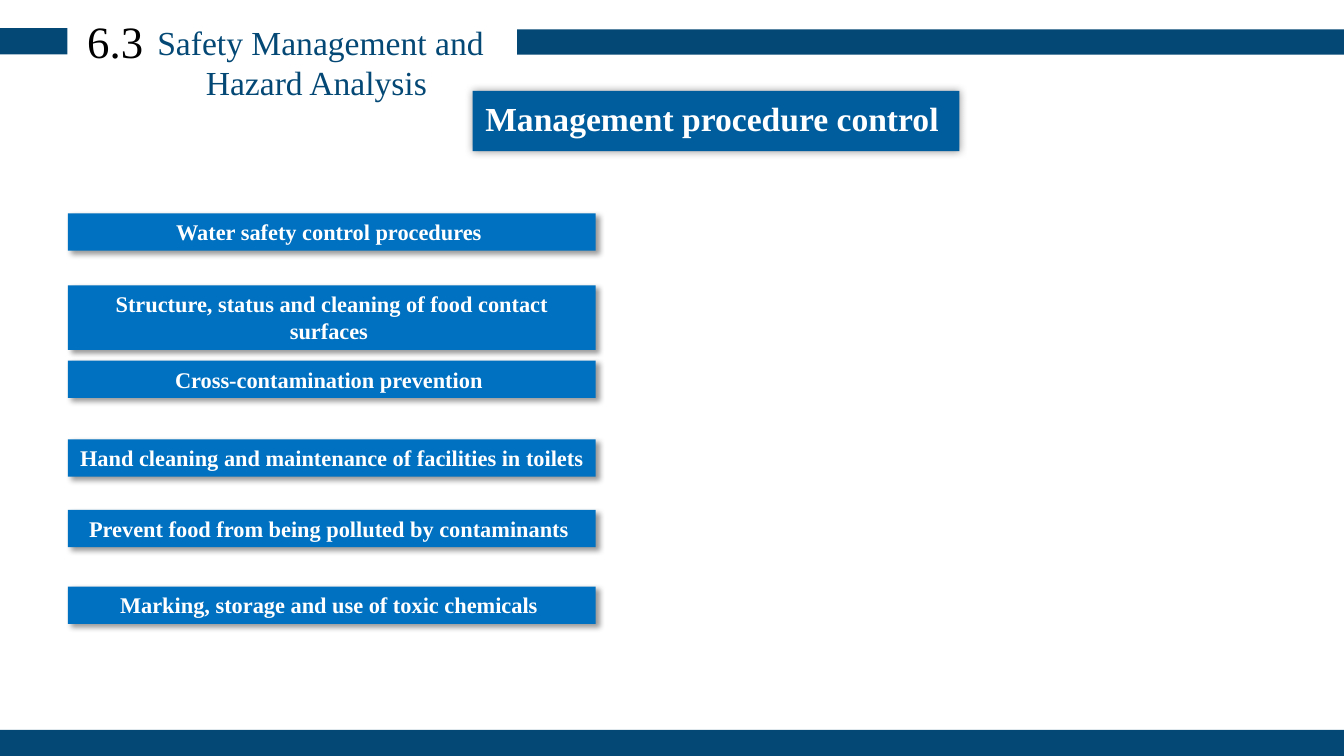
"""Build the slide on management procedure control."""
import pptx
import pptx.dml.color
import pptx.enum.shapes
import pptx.enum.text
import pptx.oxml
import pptx.oxml.ns
import pptx.util

Cm = pptx.util.Cm
FONT = "Times New Roman"
NAVY, BANNER_BLUE, ITEM_BLUE = "044875", "005D9D", "0070C0"
WHITE, BLACK = "FFFFFF", "000000"

BARS = [
    (0, 0.71, 1.7, 0.66),
    (13.03, 0.74, 20.84, 0.64),
    (0, 18.39, 33.87, 0.66),
]
HEADINGS = [
    ("Safety Management and Hazard Analysis ", (3.56, 0.43, 9.04, 2.31), 24, NAVY),
    ("6.3", (1.7, 0.23, 2.41, 1.63), 32, BLACK),
]
BANNER = (11.91, 2.29, 12.27, 1.52)
BANNER_TEXT = ("Management procedure control ", (11.89, 2.18, 12.32, 1.57))
PROCEDURES = [
    ("Water safety control procedures ", 5.38, 1),
    ("Structure, status and cleaning of food contact surfaces ", 7.19, 2),
    ("Cross-contamination prevention ", 9.09, 1),
    ("Hand cleaning and maintenance of facilities in toilets ", 11.07, 1),
    ("Prevent food from being polluted by contaminants ", 12.85, 1),
    ("Marking, storage and use of toxic chemicals ", 14.78, 1),
]
ITEM_LEFT, ITEM_WIDTH = 1.71, 13.3
PADDING, LINE_HEIGHT = 0.25, 0.69
BANNER_SHADOW, ITEM_SHADOW = (6, 0, 90), (4, 3, 45)


def color(value):
    return pptx.dml.color.RGBColor.from_string(value)


def add_shadow(shape, blur, distance, angle):
    effects = pptx.oxml.parse_xml(
        f'<a:effectLst {pptx.oxml.ns.nsdecls("a")}>'
        f'<a:outerShdw blurRad="{pptx.util.Pt(blur)}" dist="{pptx.util.Pt(distance)}" '
        f'dir="{angle * 60000}" algn="tl" rotWithShape="0">'
        f'<a:srgbClr val="{BLACK}"><a:alpha val="40000"/></a:srgbClr>'
        '</a:outerShdw></a:effectLst>'
    )
    properties = shape.element.spPr
    properties.remove(properties.find(pptx.oxml.ns.qn("a:effectLst")))
    properties.append(effects)


def add_bar(page, place, fill, shadow=None):
    bar = page.shapes.add_shape(
        pptx.enum.shapes.MSO_SHAPE.RECTANGLE, *map(Cm, place))
    bar.fill.solid()
    bar.fill.fore_color.rgb = color(fill)
    bar.line.fill.background()
    bar.shadow.inherit = False
    if shadow:
        add_shadow(bar, *shadow)
    return bar


def write(box, text, size, ink, bold=False, anchor="TOP"):
    frame = box.text_frame
    frame.word_wrap = True
    frame.vertical_anchor = pptx.enum.text.MSO_ANCHOR[anchor]
    frame.text = text
    para = frame.paragraphs[0]
    para.alignment = pptx.enum.text.PP_ALIGN.CENTER
    font = para.runs[0].font
    font.name, font.size, font.bold = FONT, pptx.util.Pt(size), bold
    font.color.rgb = color(ink)


def main():
    deck = pptx.Presentation()
    deck.slide_width, deck.slide_height = Cm(33.87), Cm(19.05)
    page = deck.slides.add_slide(deck.slide_layouts[6])

    for place in BARS:
        add_bar(page, place, NAVY)
    for text, place, size, ink in HEADINGS:
        write(page.shapes.add_textbox(*map(Cm, place)), text, size, ink)

    add_bar(page, BANNER, BANNER_BLUE, BANNER_SHADOW)
    text, place = BANNER_TEXT
    write(page.shapes.add_textbox(*map(Cm, place)), text, 24, WHITE, True, "MIDDLE")

    for text, top, lines in PROCEDURES:
        place = (ITEM_LEFT, top, ITEM_WIDTH, PADDING + lines * LINE_HEIGHT)
        write(add_bar(page, place, ITEM_BLUE, ITEM_SHADOW), text, 16, WHITE, True)

    deck.save("out.pptx")


if __name__ == "__main__":
    main()
